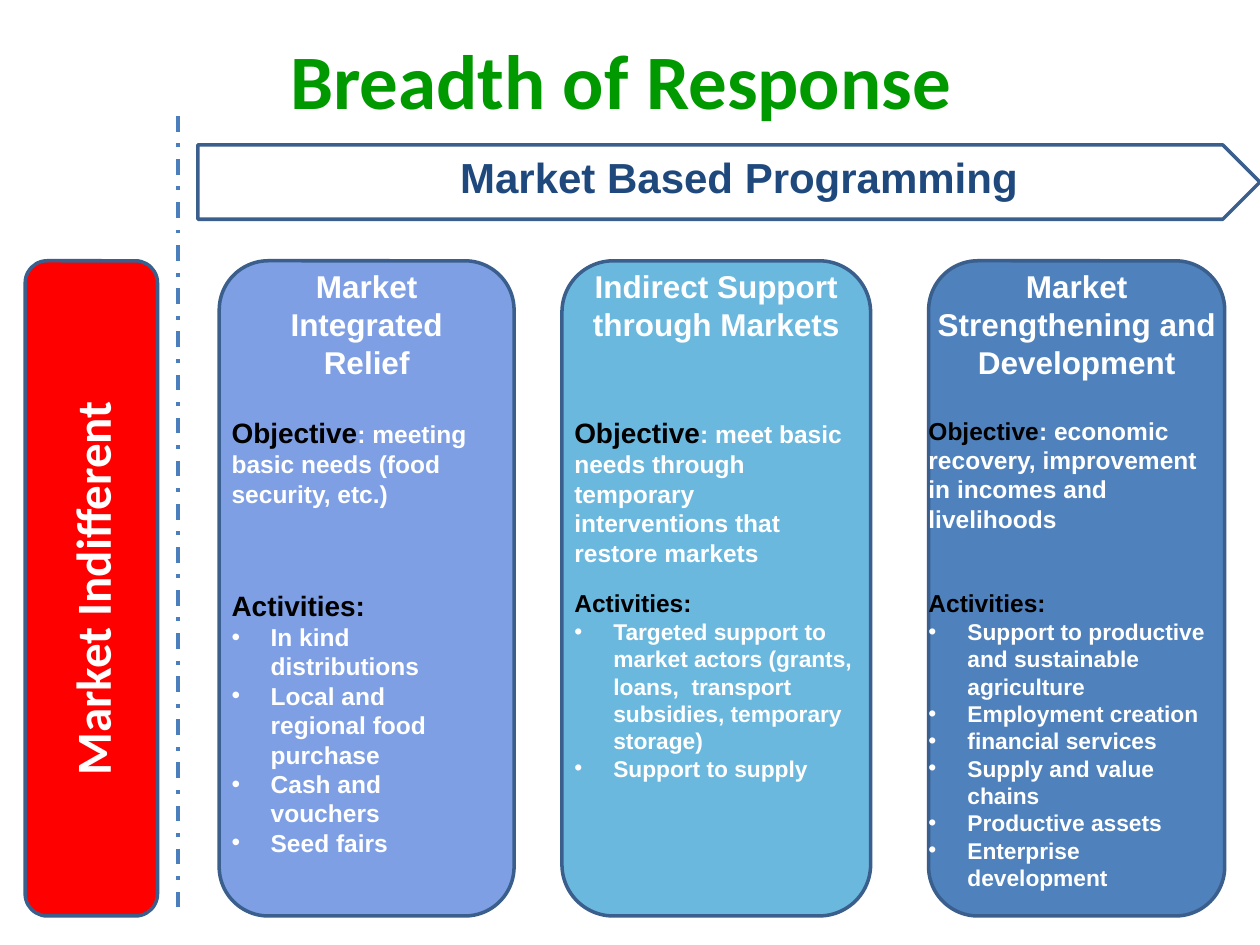
import pptx
import pptx.dml.color
import pptx.enum.dml
import pptx.enum.shapes
import pptx.enum.text
import pptx.oxml.ns
import pptx.util
from lxml import etree

Inches = pptx.util.Inches
Pt = pptx.util.Pt
RGBColor = pptx.dml.color.RGBColor
ShapeKind = pptx.enum.shapes.MSO_SHAPE
Align = pptx.enum.text.PP_ALIGN
Anchor = pptx.enum.text.MSO_ANCHOR
qn = pptx.oxml.ns.qn

GREEN = RGBColor(0x00, 0x99, 0x00)
NAVY = RGBColor(0x1F, 0x49, 0x7D)
OUTLINE = RGBColor(0x3A, 0x5F, 0x8C)
DIVIDER = RGBColor(0x4B, 0x7E, 0xBC)
RED = RGBColor(0xFF, 0x00, 0x00)
PERIWINKLE = RGBColor(0x7F, 0x9F, 0xE5)
SKY = RGBColor(0x6B, 0xB8, 0xDF)
BLUE = RGBColor(0x4F, 0x81, 0xBD)
BLACK = RGBColor(0x00, 0x00, 0x00)
WHITE = RGBColor(0xFF, 0xFF, 0xFF)

PANEL_TOP, PANEL_HEIGHT = 2.07, 5.2
OBJECTIVE_TOP, ACTIVITIES_TOP = 3.25, 4.62
BULLET_INDENT = 0.31

# Each text part has its own left edge and width; sizes are in points.
COLUMNS = [
    dict(panel=(1.74, 2.34), fill=PERIWINKLE,
         heading="Market Integrated Relief", heading_box=(1.84, 2.14, 0.82),
         objective=": meeting basic needs (food security, etc.)",
         objective_box=(1.74, 2.44, 0.7), objective_label_size=16,
         activities=["In kind distributions", "Local and regional food  purchase",
                     "Cash and vouchers", "Seed fairs"],
         activities_box=(1.74, 2.14, 2.26), activities_label_size=16, bullet_size=14),
    dict(panel=(4.46, 2.45), fill=SKY,
         heading="Indirect Support through Markets", heading_box=(4.46, 2.45, 0.82),
         objective=": meet basic needs through temporary  interventions that restore markets",
         objective_box=(4.46, 2.45, 1.31), objective_label_size=16,
         activities=["Targeted support to market actors (grants, loans,  transport "
                     "subsidies, temporary storage)", "Support to supply"],
         activities_box=(4.46, 2.45, 2.42), activities_label_size=14, bullet_size=13),
    dict(panel=(7.37, 2.35), fill=BLUE,
         heading="Market Strengthening and Development", heading_box=(7.27, 2.55, 1.17),
         objective=": economic recovery, improvement in incomes and livelihoods",
         objective_box=(7.27, 2.55, 0.94), objective_label_size=14,
         activities=["Support to productive and sustainable agriculture",
                     "Employment creation", "financial services",
                     "Supply and value chains", "Productive assets",
                     "Enterprise development"],
         activities_box=(7.27, 2.45, 2.67), activities_label_size=14, bullet_size=13),
]


class SlideBuilder:
    def __init__(self, slide, font="Arial", line_width=2):
        self.slide = slide
        self.font = font
        self.line_width = line_width

    def shape(self, kind, left, top, width, height, fill=None):
        shape = self.slide.shapes.add_shape(
            kind, Inches(left), Inches(top), Inches(width), Inches(height))
        shape.shadow.inherit = False
        if fill is None:
            shape.fill.background()
        else:
            shape.fill.solid()
            shape.fill.fore_color.rgb = fill
        shape.line.color.rgb = OUTLINE
        shape.line.width = Pt(self.line_width)
        return shape

    def text_box(self, left, top, width, height):
        box = self.slide.shapes.add_textbox(
            Inches(left), Inches(top), Inches(width), Inches(height))
        box.text_frame.word_wrap = True
        return box.text_frame

    def run(self, paragraph, text, size, color, font=None):
        run = paragraph.add_run()
        run.text = text
        run.font.name = font or self.font
        run.font.size = Pt(size)
        run.font.bold = True
        run.font.color.rgb = color

    def centered(self, frame, text, size, color, font=None):
        paragraph = frame.paragraphs[0]
        paragraph.alignment = Align.CENTER
        self.run(paragraph, text, size, color, font)

    def bullet(self, frame, text, size, color):
        paragraph = frame.add_paragraph()
        properties = paragraph._p.get_or_add_pPr()
        properties.set("marL", str(Inches(BULLET_INDENT)))
        properties.set("indent", str(-Inches(BULLET_INDENT)))
        etree.SubElement(properties, qn("a:buFont"), typeface="Arial")
        etree.SubElement(properties, qn("a:buChar"), char="•")
        self.run(paragraph, text, size, color)

    def dash_dot_line(self, x, top, bottom):
        line = self.slide.shapes.add_connector(
            pptx.enum.shapes.MSO_CONNECTOR.STRAIGHT,
            Inches(x), Inches(top), Inches(x), Inches(bottom))
        line.line.color.rgb = DIVIDER
        line.line.width = Pt(2.25)
        line.line.dash_style = pptx.enum.dml.MSO_LINE.DASH_DOT
        etree.SubElement(line._element.spPr, qn("a:effectLst"))

    def column(self, column):
        left, width = column["panel"]
        self.shape(ShapeKind.ROUNDED_RECTANGLE, left, PANEL_TOP, width, PANEL_HEIGHT,
                   column["fill"])

        def part(name, top):
            left, width, height = column[name]
            return self.text_box(left, top, width, height)

        self.centered(part("heading_box", PANEL_TOP), column["heading"], 18, WHITE)

        objective = part("objective_box", OBJECTIVE_TOP).paragraphs[0]
        self.run(objective, "Objective", column["objective_label_size"], BLACK)
        self.run(objective, column["objective"], 14, WHITE)

        activities = part("activities_box", ACTIVITIES_TOP)
        self.run(activities.paragraphs[0], "Activities:",
                 column["activities_label_size"], BLACK)
        for activity in column["activities"]:
            self.bullet(activities, activity, column["bullet_size"], WHITE)


def main():
    presentation = pptx.Presentation()
    presentation.slide_width = Inches(10)
    presentation.slide_height = Inches(7.5)
    builder = SlideBuilder(presentation.slides.add_slide(presentation.slide_layouts[6]))

    title = builder.text_box(0.43, 0, 9, 1.25)
    title.vertical_anchor = Anchor.MIDDLE
    builder.centered(title, "Breadth of Response", 44, GREEN, "Calibri")

    builder.centered(builder.text_box(2.81, 1.15, 6.11, 0.59),
                     "Market Based Programming", 24, NAVY)
    builder.dash_dot_line(1.41, 0.92, 7.27)

    indifferent = builder.shape(ShapeKind.ROUNDED_RECTANGLE, 0.2, PANEL_TOP, 1.05,
                                PANEL_HEIGHT, RED).text_frame
    indifferent.vertical_anchor = Anchor.MIDDLE
    indifferent._txBody.bodyPr.set("vert", "vert270")
    builder.centered(indifferent, "Market Indifferent", 28, WHITE, "Calibri")

    for column in COLUMNS:
        builder.column(column)

    builder.shape(ShapeKind.PENTAGON, 1.57, 1.15, 8.43, 0.59)
    presentation.save("out.pptx")


if __name__ == "__main__":
    main()
